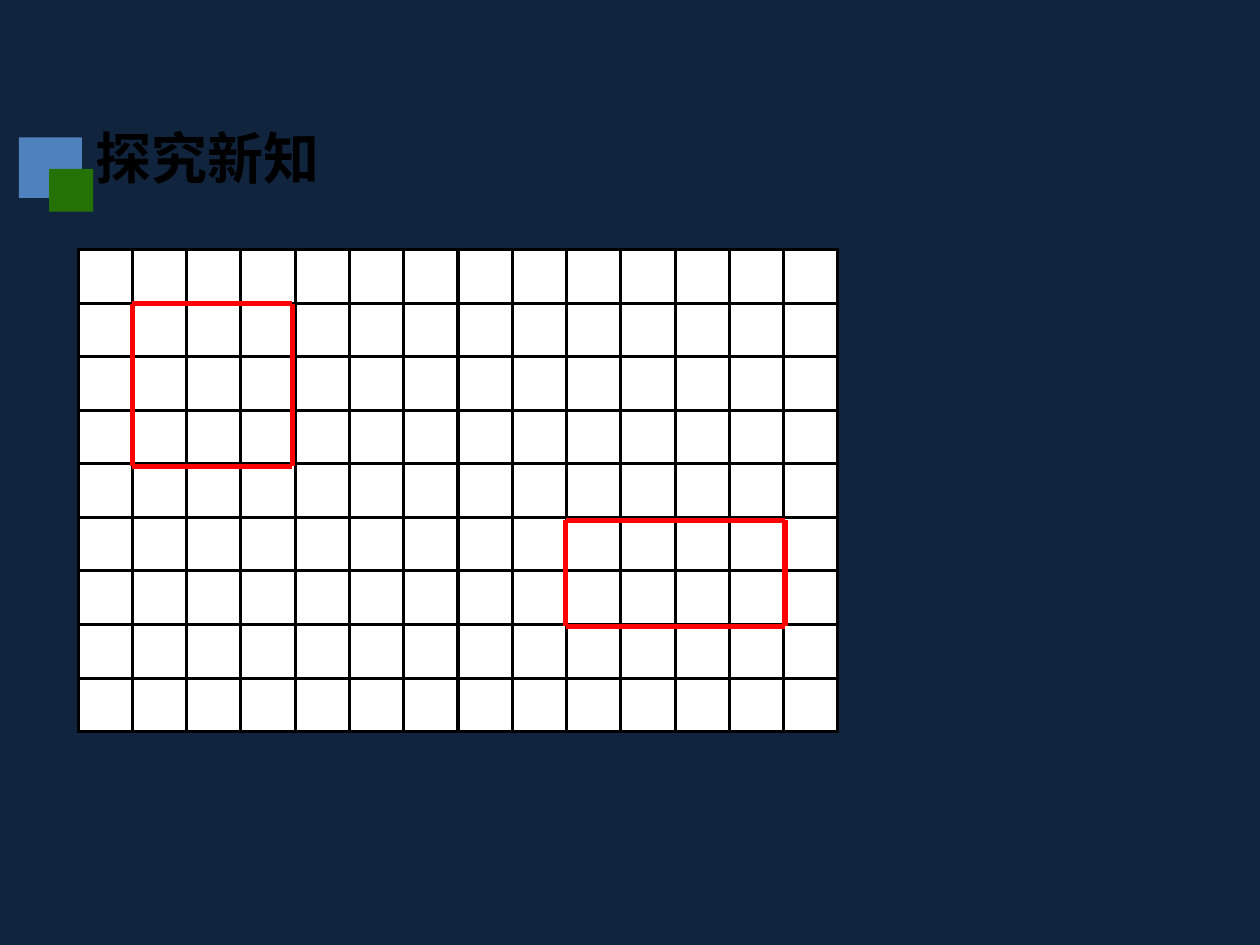
from lxml import etree
from pptx import Presentation
from pptx.dml.color import RGBColor
from pptx.enum.shapes import MSO_CONNECTOR as Connector, MSO_SHAPE as Shape
from pptx.enum.text import MSO_ANCHOR as Anchor, PP_ALIGN as Align
from pptx.oxml import parse_xml
from pptx.oxml.ns import nsdecls, qn
from pptx.util import Inches, Pt

COLORS = {
    "background": "11243D",
    "paper": "FFFFFF",
    "grid": "000000",
    "title": "000000",
    "blue": "4F81BD",
    "green": "247105",
    "outline": "FF0000",
}
COLUMNS, ROWS = 14, 9
LEFT, TOP, WIDTH, HEIGHT = 0.62, 1.98, 6.03, 3.83


def rgb(name):
    return RGBColor.from_string(COLORS[name])


def add_block(shapes, box, color):
    block = shapes.add_shape(Shape.RECTANGLE, *map(Inches, box))
    block.shadow.inherit = False
    block.fill.solid()
    block.fill.fore_color.rgb = rgb(color)
    block.line.fill.background()
    return block


prs = Presentation()
prs.slide_width, prs.slide_height = Inches(10), Inches(7.5)
slide = prs.slides.add_slide(prs.slide_layouts[5])
slide.background.fill.solid()
slide.background.fill.fore_color.rgb = rgb("background")

# White paper behind the grid
paper = add_block(slide.shapes, (LEFT, TOP, WIDTH, HEIGHT), "paper")
paper.line.color.rgb = rgb("paper")
paper.line.width = Pt(1.5)

# Overlapping squares beside the title
marker = slide.shapes.add_group_shape()
add_block(marker.shapes, (0.15, 1.09, 0.5, 0.48), "blue")
add_block(marker.shapes, (0.39, 1.34, 0.35, 0.34), "green")

# Title
title = slide.shapes.title
title.left, title.top = Inches(0.76), Inches(0.95)
title.width, title.height = Inches(2.2), Inches(0.6)
title_frame = title.text_frame
title_frame.text = "探究新知"
frame_format = {"margin_left": 0, "margin_right": 0, "margin_top": 0,
                "margin_bottom": 0, "vertical_anchor": Anchor.MIDDLE,
                "word_wrap": True}
for key, value in frame_format.items():
    setattr(title_frame, key, value)
heading = title_frame.paragraphs[0]
heading.alignment = Align.LEFT
for key, value in {"name": "Calibri", "size": Pt(32), "bold": True}.items():
    setattr(heading.font, key, value)
heading.font.color.rgb = rgb("title")

# Square grid
grid = slide.shapes.add_table(
    ROWS, COLUMNS, *map(Inches, (LEFT, TOP, WIDTH, HEIGHT))).table
grid.first_row = grid.horz_banding = False
for column in grid.columns:
    column.width = Inches(WIDTH / COLUMNS)
for row in grid.rows:
    row.height = Inches(HEIGHT / ROWS)
for cell in grid.iter_cells():
    cell.fill.background()
    properties = cell._tc.get_or_add_tcPr()
    for position, side in enumerate(("lnL", "lnR", "lnT", "lnB")):
        border = parse_xml(
            f'<a:{side} {nsdecls("a")} w="{Pt(2)}"><a:solidFill>'
            f'<a:srgbClr val="{COLORS["grid"]}"/></a:solidFill></a:{side}>')
        properties.insert(position, border)

# Red outlines of the square and the rectangle: left, top, right, bottom
for x1, y1, x2, y2 in ((1.05, 2.41, 2.32, 3.7), (4.49, 4.13, 6.23, 4.97)):
    outline = slide.shapes.add_group_shape()
    for ends in ((x1, y1, x1, y2), (x2, y1, x2, y2),
                 (x1, y1, x2, y1), (x1, y2, x2, y2)):
        edge = outline.shapes.add_connector(
            Connector.STRAIGHT, *map(Inches, ends))
        edge.line.color.rgb = rgb("outline")
        edge.line.width = Pt(3)
        etree.SubElement(edge._element.spPr, qn("a:effectLst"))

prs.save("out.pptx")
